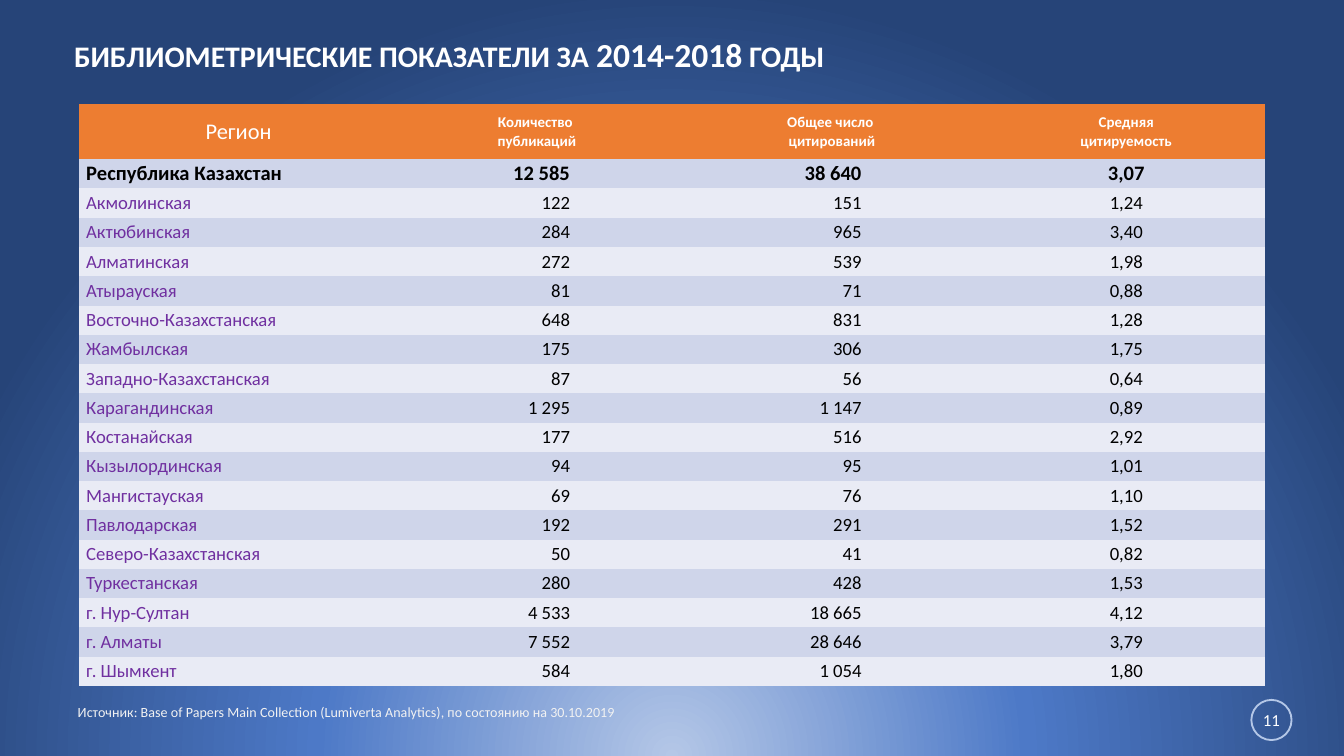
from pptx import Presentation
from pptx.dml.color import RGBColor as Rgb
from pptx.enum.shapes import MSO_SHAPE as Kind
from pptx.enum.text import MSO_ANCHOR as Anchor, MSO_AUTO_SIZE as Auto, PP_ALIGN as Align
from pptx.oxml import parse_xml as to_xml
from pptx.oxml.ns import nsdecls, qn
from pptx.util import Cm, Pt

HUES = {
    "white": "FFFFFF", "black": "000000", "purple": "7030A0", "orange": "ED7D31",
    "dark": "CFD5EA", "light": "E9EBF5", "note": "F2F2F2",
    "glow": "B4C7E7", "mid": "4D79C7", "edge": "264478",
}
FONT = "Calibri"
PLAIN = "{2D5ABB26-0587-4C30-8999-92F81FD0307C}"
COLS = [6.02, 5.26, 5.89, 5.23]
HEAD = ["Регион", "Количество \nпубликаций", "Общее число \nцитирований", "Средняя\nцитируемость"]
ROWS = [
    ("Республика Казахстан", "12 585", "38 640", "3,07"),
    ("Акмолинская", "122", "151", "1,24"),
    ("Актюбинская", "284", "965", "3,40"),
    ("Алматинская", "272", "539", "1,98"),
    ("Атырауская", "81", "71", "0,88"),
    ("Восточно-Казахстанская", "648", "831", "1,28"),
    ("Жамбылская", "175", "306", "1,75"),
    ("Западно-Казахстанская", "87", "56", "0,64"),
    ("Карагандинская", "1 295", "1 147", "0,89"),
    ("Костанайская", "177", "516", "2,92"),
    ("Кызылординская", "94", "95", "1,01"),
    ("Мангистауская", "69", "76", "1,10"),
    ("Павлодарская", "192", "291", "1,52"),
    ("Северо-Казахстанская", "50", "41", "0,82"),
    ("Туркестанская", "280", "428", "1,53"),
    ("г. Нур-Султан", "4 533", "18 665", "4,12"),
    ("г. Алматы", "7 552", "28 646", "3,79"),
    ("г. Шымкент", "584", "1 054", "1,80"),
]


def tint(name):
    return Rgb.from_string(HUES[name])


def add_run(para, text, size, hue, bold=False):
    run = para.add_run()
    run.text = text
    font = run.font
    font.name, font.size, font.bold = FONT, Pt(size), bold
    font.color.rgb = tint(hue)


def inset(item, left, top, right, base):
    item.margin_left, item.margin_top = Cm(left), Cm(top)
    item.margin_right, item.margin_bottom = Cm(right), Cm(base)


def add_text(shapes, box, pads, wrap=True, anchor=Anchor.TOP):
    frame = shapes.add_textbox(*map(Cm, box)).text_frame
    frame.word_wrap = wrap
    frame.vertical_anchor = anchor
    inset(frame, *pads)
    return frame


def backdrop(slide):
    stops = "".join(
        f'<a:gs pos="{spot * 1000}"><a:srgbClr val="{HUES[name]}"/></a:gs>'
        for spot, name in [(0, "glow"), (46, "mid"), (100, "edge")]
    )
    slide.element.cSld.insert(0, to_xml(
        f'<p:bg {nsdecls("p", "a")}><p:bgPr><a:gradFill rotWithShape="1">'
        f'<a:gsLst>{stops}</a:gsLst><a:path path="circle">'
        '<a:fillToRect l="50000" t="130000" r="50000" b="-30000"/></a:path>'
        '</a:gradFill><a:effectLst/></p:bgPr></p:bg>'
    ))


def title(slide, box):
    frame = add_text(slide.shapes, box, (0.18, 0.1, 0.18, 0.1), False, Anchor.MIDDLE)
    frame.auto_size = Auto.SHAPE_TO_FIT_TEXT
    para = frame.paragraphs[0]
    add_run(para, "БИБЛИОМЕТРИЧЕСКИЕ ПОКАЗАТЕЛИ ЗА ", 16, "white", True)
    add_run(para, "2014-2018", 18, "white", True)
    add_run(para, " ГОДЫ", 16, "white", True)


def fill_cell(cell, text, hue, align, right, size, ink, bold):
    cell.fill.solid()
    cell.fill.fore_color.rgb = tint(hue)
    cell.vertical_anchor = Anchor.MIDDLE
    inset(cell, 0.13, 0, right, 0)
    para = cell.text_frame.paragraphs[0]
    para.alignment = align
    for n, line in enumerate(text.split("\n")):
        if n:
            para.add_line_break()
        add_run(para, line, size, ink, bold)


def table(slide, box, top=1.04):
    frame = slide.shapes.add_table(len(ROWS) + 1, len(COLS), *map(Cm, box))
    frame.element.find(".//" + qn("a:tableStyleId")).text = PLAIN
    grid = frame.table
    for col, wide in zip(grid.columns, COLS):
        col.width = Cm(wide)
    grid.rows[0].height = Cm(top)
    for c, text in enumerate(HEAD):
        fill_cell(grid.cell(0, c), text, "orange", Align.CENTER, 0.13,
                  8 if c else 12, "white", c > 0)
    sides = [Align.LEFT, Align.RIGHT, Align.RIGHT, Align.CENTER]
    pads = [0.13, 2.01, 2.39, 0.13]
    for r, row in enumerate(ROWS, 1):
        grid.rows[r].height = Cm((box[3] - top) / len(ROWS))
        total = r == 1
        for c, text in enumerate(row):
            ink = "black" if c or total else "purple"
            fill_cell(grid.cell(r, c), text, "dark" if r % 2 else "light",
                      sides[c], pads[c], 11 if total else 10, ink, total)


def source(slide, box):
    frame = add_text(slide.shapes, box, (0.25, 0.13, 0.25, 0.13))
    frame.auto_size = Auto.SHAPE_TO_FIT_TEXT
    add_run(frame.paragraphs[0],
            "Источник: Base of Papers Main Collection (Lumiverta Analytics), "
            "по состоянию на 30.10.2019", 7.5, "note")


def badge(slide, box):
    group = slide.shapes.add_group_shape()
    ring = group.shapes.add_shape(Kind.OVAL, *map(Cm, box))
    ring.shadow.inherit = False
    ring.fill.background()
    ring.line.color.rgb = tint("glow")
    ring.line.width = Pt(1)
    frame = add_text(group.shapes, box, (0, 0.13, 0, 0.13), anchor=Anchor.MIDDLE)
    para = frame.paragraphs[0]
    para.alignment = Align.CENTER
    add_run(para, "11", 9, "white")


def main():
    deck = Presentation()
    deck.slide_width, deck.slide_height = Cm(25.4), Cm(14.29)
    slide = deck.slides.add_slide(deck.slide_layouts[6])
    backdrop(slide)
    title(slide, (1.22, 0.53, 14.73, 0.97))
    table(slide, (1.5, 1.97, 22.4, 11))
    source(slide, (1.22, 13.16, 10.82, 0.58))
    badge(slide, (23.65, 13.23, 0.76, 0.76))
    deck.save("out.pptx")


if __name__ == "__main__":
    main()
